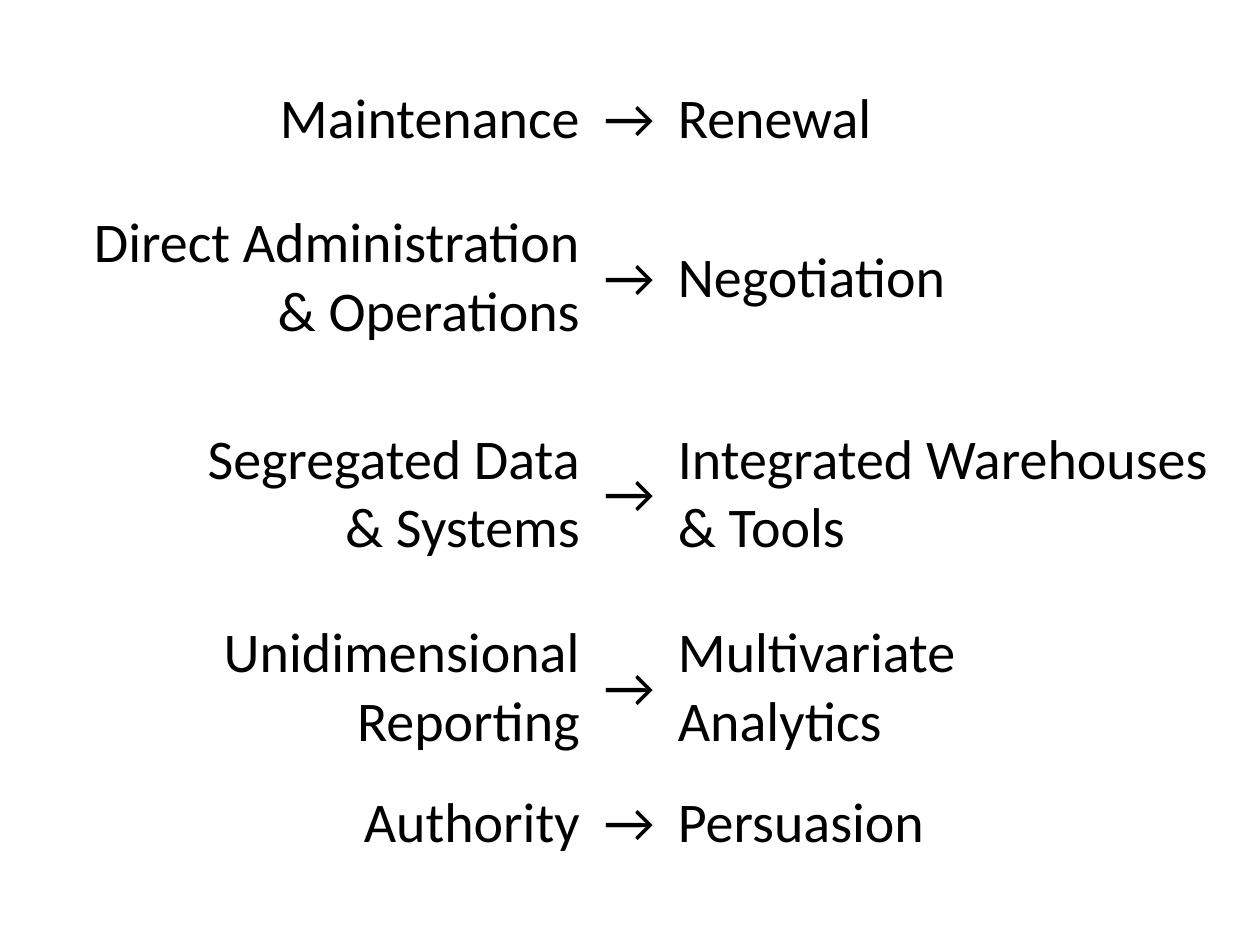
from pptx import Presentation
from pptx.dml.color import RGBColor
from pptx.enum.text import MSO_ANCHOR as Anchor, PP_ALIGN as Align
from pptx.util import Emu, Pt

EMU_PER_PX = 914400 // 126
COLORS = {"background": "FFFFFF", "text": "000000"}
NO_STYLE_NO_GRID = "{2D5ABB26-0587-4C30-8999-92F81FD0307C}"

COLUMN_WIDTHS = [567, 74, 567]
ALIGNMENTS = [Align.RIGHT, Align.CENTER, Align.LEFT]

# Row height, lines of the old way, lines of the new way
SHIFTS = [
    (113, ["Maintenance"], ["Renewal"]),
    (204, ["Direct Administration", "& Operations"], ["Negotiation"]),
    (229, ["Segregated Data", "& Systems"],
     ["Integrated Warehouses", "& Tools"]),
    (158, ["Unidimensional", "Reporting"], ["Multivariate", "Analytics"]),
    (113, ["Authority"], ["Persuasion"]),
]


def px(length):
    return Emu(length * EMU_PER_PX)


class SlideBuilder:
    """Holds the text style and the current slide."""

    font_name = "Calibri"
    font_size = 32

    def __init__(self, slide):
        self.slide = slide

    def background(self, color):
        fill = self.slide.background.fill
        fill.solid()
        fill.fore_color.rgb = RGBColor.from_string(COLORS[color])

    def table(self, left, top, widths, heights, rows, alignments):
        frame = self.slide.shapes.add_table(
            len(heights), len(widths), px(left), px(top),
            px(sum(widths)), px(sum(heights)))
        table = frame.table
        table.first_row = False
        table.horz_banding = False
        table._tbl.tblPr.find("{*}tableStyleId").text = NO_STYLE_NO_GRID
        for column, width in zip(table.columns, widths):
            column.width = px(width)
        for row, height, texts in zip(table.rows, heights, rows):
            row.height = px(height)
            for cell, lines, alignment in zip(row.cells, texts, alignments):
                self.cell(cell, lines, alignment)

    def cell(self, cell, lines, alignment):
        cell.fill.background()
        cell.vertical_anchor = Anchor.MIDDLE
        cell.margin_left = cell.margin_right = px(12)
        cell.margin_top = cell.margin_bottom = px(6)
        frame = cell.text_frame
        for index, line in enumerate(lines):
            paragraph = frame.add_paragraph() if index else frame.paragraphs[0]
            paragraph.alignment = alignment
            run = paragraph.add_run()
            run.text = line
            run.font.name = self.font_name
            run.font.size = Pt(self.font_size)
            run.font.color.rgb = RGBColor.from_string(COLORS["text"])


def main():
    presentation = Presentation()
    presentation.slide_width = px(1260)
    presentation.slide_height = px(945)
    blank_layout = presentation.slide_layouts[6]
    builder = SlideBuilder(presentation.slides.add_slide(blank_layout))
    builder.background("background")

    # Table of shifts: old way, arrow, new way
    heights = [height for height, _, _ in SHIFTS]
    rows = [(old, ["→"], new) for _, old, new in SHIFTS]
    builder.table(25, 63, COLUMN_WIDTHS, heights, rows, ALIGNMENTS)

    presentation.save("out.pptx")


if __name__ == "__main__":
    main()
